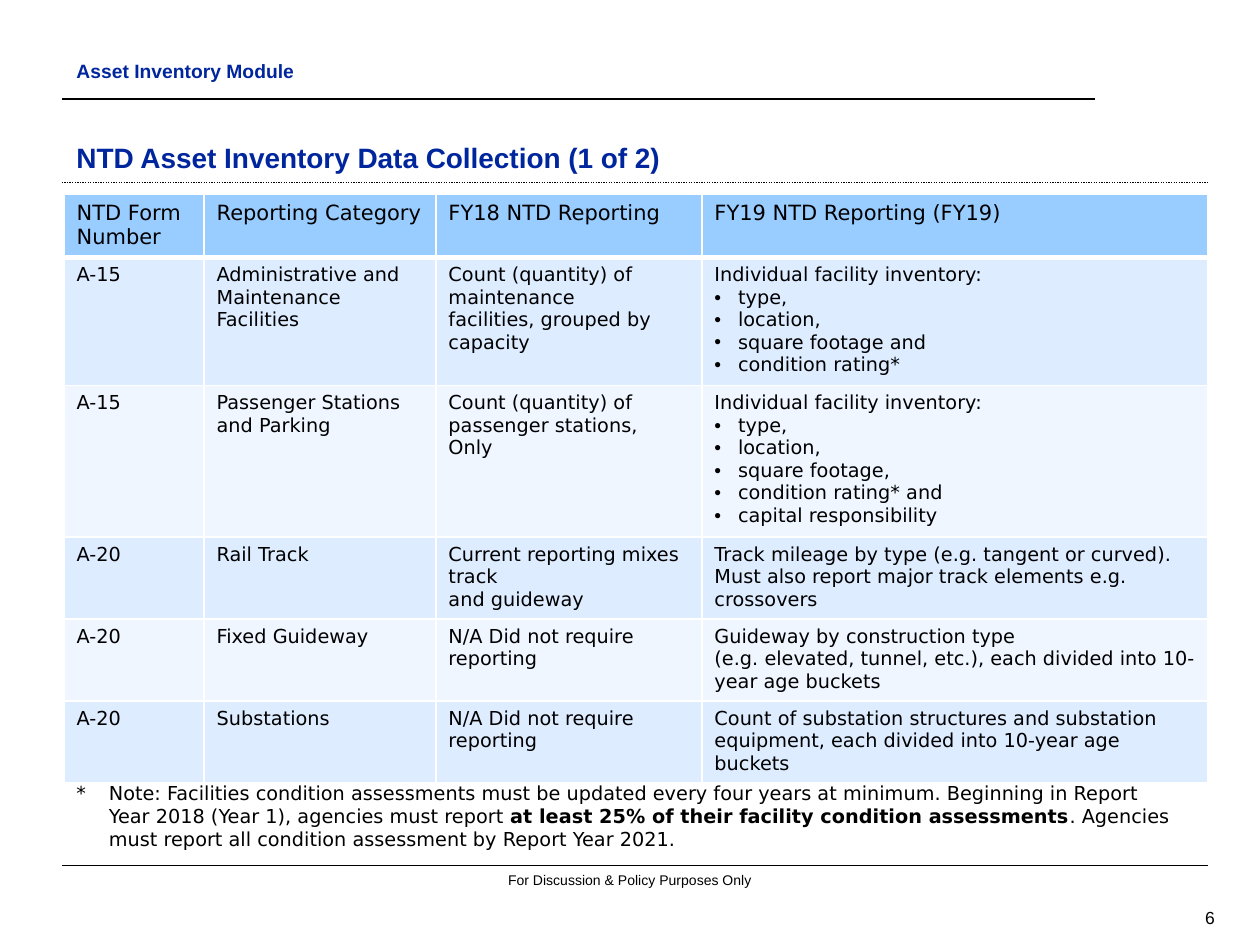
from dataclasses import dataclass

import lxml.etree
import pptx
import pptx.dml.color
import pptx.enum.dml
import pptx.enum.shapes
import pptx.enum.text
import pptx.oxml.ns
import pptx.util

Pt = pptx.util.Pt
qn = pptx.oxml.ns.qn
Align = pptx.enum.text.PP_ALIGN
Anchor = pptx.enum.text.MSO_ANCHOR
NAVY, BLACK, WHITE = "00269E", "000000", "FFFFFF"
HEADER_FILL, BAND_FILLS = "99CCFF", ("DEECFF", "EFF6FF")
BULLET = "• "


@dataclass
class Style:
    size: float
    font: str = "Arial"
    color: str = BLACK
    bold: bool = False


@dataclass
class Label:
    text: str
    box: tuple[float, float, float, float]
    style: Style
    align: Align = Align.LEFT
    anchor: Anchor = Anchor.TOP


@dataclass
class Rule:
    y: float
    right: float
    width: float
    dotted: bool = False


def rgb(color: str) -> pptx.dml.color.RGBColor:
    return pptx.dml.color.RGBColor.from_string(color)


def add_run(paragraph, text: str, style: Style) -> None:
    run = paragraph.add_run()
    run.text = text
    run.font.size = Pt(style.size)
    run.font.name = style.font
    run.font.bold = style.bold
    run.font.color.rgb = rgb(style.color)


def hang(paragraph, indent: float) -> lxml.etree._Element:
    properties = paragraph._p.get_or_add_pPr()
    properties.set("marL", str(Pt(indent)))
    properties.set("indent", str(-Pt(indent)))
    return properties


def add_box(slide, box: tuple[float, float, float, float], anchor: Anchor = Anchor.TOP):
    frame = slide.shapes.add_textbox(*map(Pt, box)).text_frame
    frame.word_wrap = True
    frame.vertical_anchor = anchor
    return frame.paragraphs[0]


def draw_label(slide, label: Label) -> None:
    paragraph = add_box(slide, label.box, label.anchor)
    paragraph.alignment = label.align
    add_run(paragraph, label.text, label.style)


def draw_rule(slide, rule: Rule) -> None:
    line = slide.shapes.add_connector(
        pptx.enum.shapes.MSO_CONNECTOR.STRAIGHT,
        Pt(35.3), Pt(rule.y), Pt(rule.right), Pt(rule.y))
    line.line.color.rgb = rgb(BLACK)
    line.line.width = Pt(rule.width)
    if rule.dotted:
        line.line.dash_style = pptx.enum.dml.MSO_LINE.ROUND_DOT
    lxml.etree.SubElement(line._element.spPr, qn("a:effectLst"))


def set_borders(cell, bottom: float) -> None:
    properties = cell._tc.get_or_add_tcPr()
    edges = {"a:lnL": 1, "a:lnR": 1, "a:lnT": 1, "a:lnB": bottom}
    for position, (edge, width) in enumerate(edges.items()):
        border = lxml.etree.Element(qn(edge), w=str(Pt(width)))
        fill = lxml.etree.SubElement(border, qn("a:solidFill"))
        lxml.etree.SubElement(fill, qn("a:srgbClr"), val=WHITE)
        properties.insert(position, border)


def fill_cell(cell, text: str, style: Style, color: str, bottom: float) -> None:
    cell.fill.solid()
    cell.fill.fore_color.rgb = rgb(color)
    set_borders(cell, bottom)
    frame = cell.text_frame
    for index, line in enumerate(text.split("\n")):
        paragraph = frame.add_paragraph() if index else frame.paragraphs[0]
        if line.startswith(BULLET):
            properties = hang(paragraph, 13.5)
            lxml.etree.SubElement(properties, qn("a:buFont"), typeface="Arial")
            lxml.etree.SubElement(properties, qn("a:buChar"), char="•")
        add_run(paragraph, line.removeprefix(BULLET), style)


def draw_inventory(slide, rows: list[tuple[str, ...]]) -> None:
    widths = (80, 132.5, 152, 289)
    heights = (35, 71, 84, 45.5, 45.5, 45.5)
    inventory = slide.shapes.add_table(
        len(rows), len(widths), Pt(36.6), Pt(111.1), Pt(sum(widths)), Pt(sum(heights))).table
    for column, width in zip(inventory.columns, widths):
        column.width = Pt(width)
    for index, (row, height, texts) in enumerate(zip(inventory.rows, heights, rows)):
        row.height = Pt(height)
        header = index == 0
        color = HEADER_FILL if header else BAND_FILLS[(index - 1) % 2]
        style = Style(12 if header else 11, "DejaVu Sans")
        for cell, text in zip(row.cells, texts):
            fill_cell(cell, text, style, color, 3 if header else 1)


def draw_note(slide, parts: list[tuple[str, bool]]) -> None:
    paragraph = add_box(slide, (36.6, 442.8, 647.3, 47.5))
    tabs = lxml.etree.SubElement(hang(paragraph, 18.5), qn("a:tabLst"))
    lxml.etree.SubElement(tabs, qn("a:tab"), pos=str(Pt(18.5)), algn="l")
    for text, bold in parts:
        add_run(paragraph, text, Style(11, "DejaVu Sans", bold=bold))


RULES = [
    Rule(56.7, 625.7, 1),
    Rule(104.4, 690.5, 0.75, dotted=True),
    Rule(494.6, 690.5, 0.75),
]
LABELS = [
    Label("6", (641.5, 515.5, 59.8, 18), Style(10), Align.RIGHT, Anchor.MIDDLE),
    Label("For Discussion & Policy Purposes Only", (257, 494.6, 206, 17), Style(8), Align.CENTER),
    Label("NTD Asset Inventory Data Collection (1 of 2)", (36.6, 66.2, 610.6, 36.7),
          Style(16, color=NAVY, bold=True), anchor=Anchor.BOTTOM),
    Label("Asset Inventory Module", (36.6, 30.2, 575.3, 18), Style(11, color=NAVY, bold=True)),
]
INVENTORY = [
    ("NTD Form Number", "Reporting Category", "FY18 NTD Reporting", "FY19 NTD Reporting (FY19)"),
    ("A-15", "Administrative and Maintenance Facilities",
     "Count (quantity) of maintenance\nfacilities, grouped by capacity",
     "Individual facility inventory:\n• type,\n• location,\n• square footage and\n"
     "• condition rating*"),
    ("A-15", "Passenger Stations and Parking",
     "Count (quantity) of passenger stations,\nOnly",
     "Individual facility inventory:\n• type,\n• location,\n• square footage,\n"
     "• condition rating* and\n• capital responsibility"),
    ("A-20", "Rail Track", "Current reporting mixes track\nand guideway",
     "Track mileage by type (e.g. tangent or curved). Must also report major track "
     "elements e.g. crossovers"),
    ("A-20", "Fixed Guideway", "N/A Did not require reporting",
     "Guideway by construction type\n"
     "(e.g. elevated, tunnel, etc.), each divided into 10-year age buckets"),
    ("A-20", "Substations", "N/A Did not require reporting",
     "Count of substation structures and substation equipment, each divided into "
     "10-year age buckets"),
]
NOTE = [
    ("* \tNote: Facilities condition assessments must be updated every four years at minimum. "
     "Beginning in Report Year 2018 (Year 1), agencies must report ", False),
    ("at least 25% of their facility condition assessments", True),
    (". Agencies must report all condition assessment by Report Year 2021.", False),
]


def main() -> None:
    deck = pptx.Presentation()
    deck.slide_width, deck.slide_height = Pt(720), Pt(540)
    slide = deck.slides.add_slide(deck.slide_layouts[6])
    for rule in RULES:
        draw_rule(slide, rule)
    for label in LABELS:
        draw_label(slide, label)
    draw_inventory(slide, INVENTORY)
    draw_note(slide, NOTE)
    deck.save("out.pptx")


if __name__ == "__main__":
    main()
